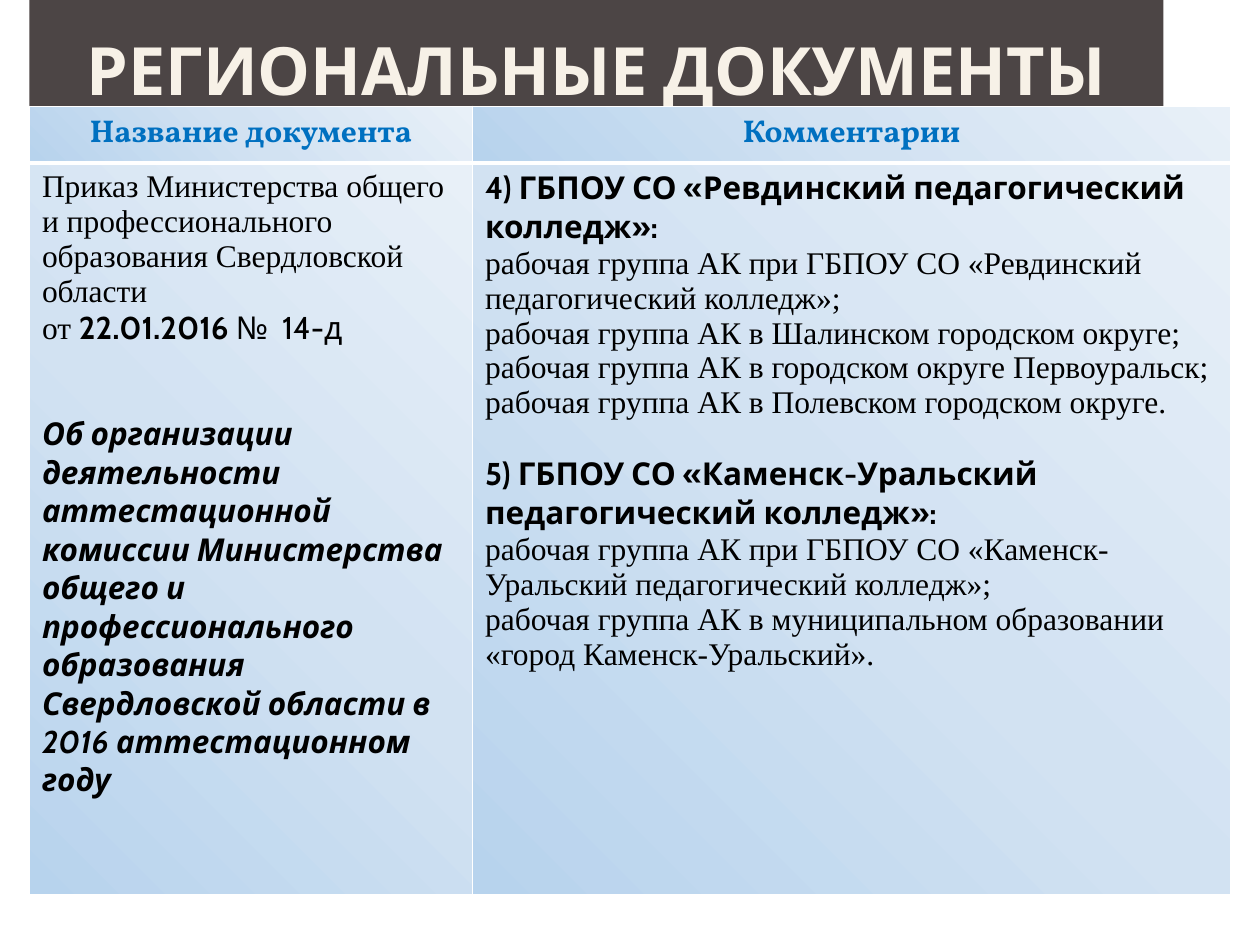
"""Builds the slide of regional documents with their comments."""
from lxml.etree import SubElement
from pptx import Presentation
from pptx.dml.color import RGBColor
from pptx.enum.text import MSO_ANCHOR, MSO_AUTO_SIZE, PP_ALIGN
from pptx.oxml.ns import qn
from pptx.util import Pt

THEME = {
    "band": "4C4545", "title": "F7F1E7", "outline": "3D2E29",
    "heading": "0070C0", "text": "000000", "border": "FFFFFF",
    "gradient": {0: "B7D3ED", 50: "D2E2F2", 100: "E8F0F8"},
    "title_size": 38, "text_size": 18,
}
BASE = {"size": Pt(THEME["text_size"]), "bold": False, "italic": False}
STYLES = {
    "title": BASE | {"name": "Cabin", "size": Pt(THEME["title_size"]), "bold": True},
    "heading": BASE | {"name": "Vollkorn", "bold": True},
    "plain": BASE | {"name": "Times New Roman"},
    "number": BASE | {"name": "Cabin"},
    "strong": BASE | {"name": "Cabin", "bold": True},
    "subject": BASE | {"name": "Cabin", "bold": True, "italic": True},
}
COLORS = {"title": THEME["title"], "heading": THEME["heading"]}
HEADINGS = ["Название документа", "Комментарии"]
ORDER = [
    (0, [("plain", "Приказ Министерства общего и профессионального образования Свердловской области")]),
    (0, [("plain", "от "), ("strong", "22.01.2016 "), ("number", "№  14-д")]),
    (39, [("subject", "Об организации деятельности аттестационной комиссии Министерства общего и "
           "профессионального образования  Свердловской области в 2016 аттестационном году")]),
]
COMMENTS = [
    (0, [("strong", "4) ГБПОУ СО «Ревдинский педагогический колледж»:")]),
    (0, [("plain", "рабочая группа АК при ГБПОУ СО «Ревдинский педагогический колледж»;")]),
    (0, [("plain", "рабочая группа АК в Шалинском городском округе;")]),
    (0, [("plain", "рабочая группа АК в городском округе Первоуральск;")]),
    (0, [("plain", "рабочая группа АК в Полевском городском округе.")]),
    (20, [("strong", "5) ГБПОУ СО «Каменск-Уральский педагогический колледж»:")]),
    (0, [("plain", "рабочая группа АК при ГБПОУ СО «Каменск-Уральский педагогический колледж»;")]),
    (0, [("plain", "рабочая группа АК в муниципальном образовании «город Каменск-Уральский».")]),
]


def write(frame, paragraphs, align):
    for index, (gap, runs) in enumerate(paragraphs):
        paragraph = frame.add_paragraph() if index else frame.paragraphs[0]
        paragraph.alignment = align
        paragraph.space_before = Pt(gap)
        for style, words in runs:
            run = paragraph.add_run()
            run.text = words
            for attribute, value in STYLES[style].items():
                setattr(run.font, attribute, value)
            run.font.color.rgb = RGBColor.from_string(COLORS.get(style, THEME["text"]))


def add_solid(parent, color):
    SubElement(SubElement(parent, qn("a:solidFill")), qn("a:srgbClr"), val=color)


deck = Presentation()
deck.slide_width, deck.slide_height = Pt(720), Pt(540)
slide = deck.slides.add_slide(deck.slide_layouts[5])

title = slide.shapes.title
for attribute, value in {"left": 16.8, "top": 0, "width": 648, "height": 62}.items():
    setattr(title, attribute, Pt(value))
title.fill.solid()
title.fill.fore_color.rgb = RGBColor.from_string(THEME["band"])
title_format = {
    "margin_left": Pt(3.6), "margin_right": Pt(3.6), "margin_top": 0, "margin_bottom": 0,
    "vertical_anchor": MSO_ANCHOR.BOTTOM, "word_wrap": True, "auto_size": MSO_AUTO_SIZE.NONE,
}
for attribute, value in title_format.items():
    setattr(title.text_frame, attribute, value)
write(title.text_frame, [(0, [("title", "РЕГИОНАЛЬНЫЕ ДОКУМЕНТЫ")])], PP_ALIGN.CENTER)
title_properties = title.text_frame.paragraphs[0].runs[0].font._element
outline = SubElement(title_properties, qn("a:ln"), w=str(Pt(0.04)))
add_solid(outline, THEME["outline"])
title_properties.insert(0, outline)

documents = slide.shapes.add_table(2, 2, Pt(16.8), Pt(60.8), Pt(686.4), Pt(449.8)).table
documents.horz_banding = False
for column, width in zip(documents.columns, [253.2, 433.2]):
    column.width = Pt(width)
for row, height in zip(documents.rows, [31.6, 418.2]):
    row.height = Pt(height)

heading_cells = [[(0, [("heading", heading)])] for heading in HEADINGS]
for row_index, contents in enumerate([heading_cells, [ORDER, COMMENTS]]):
    align = PP_ALIGN.LEFT if row_index else PP_ALIGN.CENTER
    borders = {"L": 1, "R": 1, "T": 3 if row_index else 1, "B": 1 if row_index else 3}
    for column_index, paragraphs in enumerate(contents):
        cell = documents.cell(row_index, column_index)
        write(cell.text_frame, paragraphs, align)
        properties = cell._tc.get_or_add_tcPr()
        for side, weight in borders.items():
            add_solid(SubElement(properties, qn(f"a:ln{side}"), w=str(Pt(weight))), THEME["border"])
        gradient = SubElement(properties, qn("a:gradFill"), rotWithShape="1")
        stops = SubElement(gradient, qn("a:gsLst"))
        for position, color in THEME["gradient"].items():
            stop = SubElement(stops, qn("a:gs"), pos=str(position * 1000))
            SubElement(stop, qn("a:srgbClr"), val=color)
        circle = SubElement(gradient, qn("a:path"), path="circle")
        SubElement(circle, qn("a:fillToRect"), t="100000", r="100000")

deck.save("out.pptx")
